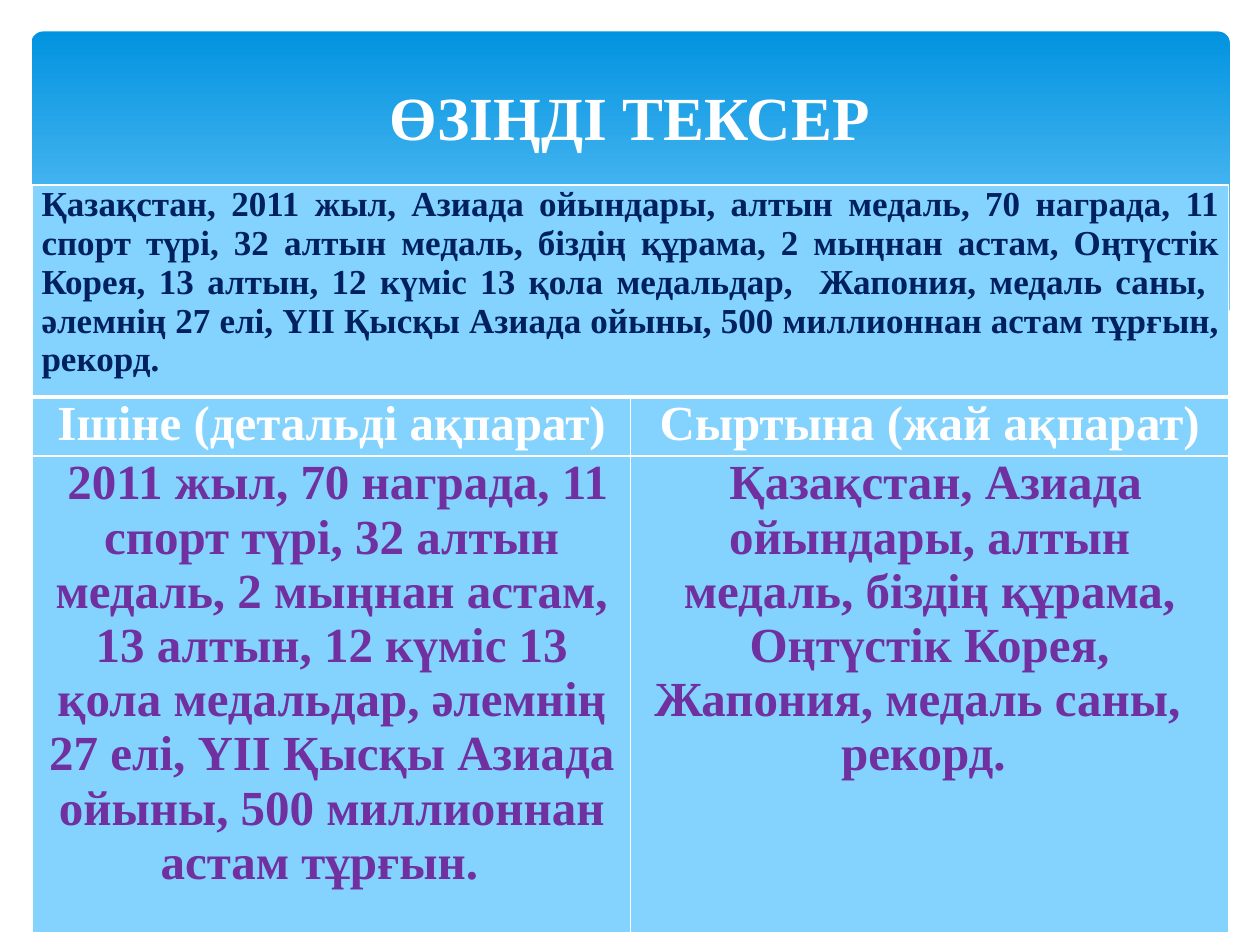
from lxml import etree
from pptx import Presentation
from pptx import util as u
from pptx.dml.color import RGBColor
from pptx.enum import shapes, text
from pptx.oxml.ns import qn

FONT = "Times New Roman"
WHITE, SKY, BLUE = "FFFFFF", "83D3FE", "0293E0"
NAVY, PLUM = "002060", "7030A0"
LEFT, MID, JUST = text.PP_ALIGN.LEFT, text.PP_ALIGN.CENTER, text.PP_ALIGN.JUSTIFY

LIST = ("Қазақстан, 2011 жыл, Азиада ойындары, алтын медаль, 70 награда, "
        "11 спорт түрі, 32 алтын медаль, біздің құрама, 2 мыңнан астам, "
        "Оңтүстік Корея, 13 алтын, 12 күміс 13 қола медальдар,  Жапония, "
        "медаль саны,  әлемнің 27 елі, ҮІІ Қысқы Азиада ойыны, "
        "500 миллионнан астам тұрғын, рекорд. ")
INNER = (" 2011 жыл, 70 награда, 11 спорт түрі, 32 алтын медаль, "
         "2 мыңнан астам, 13 алтын, 12 күміс 13 қола медальдар, "
         "әлемнің 27 елі, ҮІІ Қысқы Азиада ойыны, "
         "500 миллионнан астам тұрғын.  ")
OUTER = (" Қазақстан, Азиада ойындары, алтын медаль, біздің құрама, "
         "Оңтүстік Корея, Жапония, медаль саны,   рекорд. ")

# Lower edge of the banner, relative to its box
WAVE = [(9.52, 2.21), (9.05, 2.37), (8.5, 2.48), (7.84, 2.52), (7.01, 2.47),
        (6.01, 2.33), (4.78, 2.08), (3.66, 1.82), (2.67, 1.65), (1.68, 1.59),
        (0.81, 1.64), (0.27, 1.76), (-0.02, 1.88), (-0.02, 3.04), (9.52, 3.04)]


def rgb(code):
    return RGBColor.from_string(code)


def style(para, size, color, align):
    para.alignment = align
    font = para.font
    font.name, font.size, font.bold = FONT, u.Pt(size), True
    font.color.rgb = rgb(color)


def banner(slide, x, y, w, h):
    # Rounded gradient panel
    panel = slide.shapes.add_shape(
        shapes.MSO_SHAPE.ROUNDED_RECTANGLE, *map(u.Inches, (x, y, w, h)))
    panel.adjustments[0] = 0.034
    panel.shadow.inherit = False
    panel.line.fill.background()
    panel.fill.gradient()
    panel.fill.gradient_angle = 270
    for stop, color, pos in zip(panel.fill.gradient_stops, (BLUE, SKY), (0, 0.9)):
        stop.color.rgb, stop.position = rgb(color), pos

    # White wave along the bottom
    pts = [(u.Inches(x + a), u.Inches(y + b)) for a, b in WAVE]
    pen = slide.shapes.build_freeform(*pts[0])
    pen.add_line_segments(pts[1:], close=True)
    wave = pen.convert_to_shape()
    wave.shadow.inherit = False
    wave.fill.solid()
    wave.fill.fore_color.rgb = rgb(WHITE)
    wave.line.fill.background()


def heading(slide, x, y, w, h):
    title = slide.shapes.title
    title.left, title.top, title.width, title.height = map(u.Inches, (x, y, w, h))
    frame = title.text_frame
    frame.text = "ӨЗІҢДІ ТЕКСЕР"
    frame.vertical_anchor = text.MSO_ANCHOR.MIDDLE
    style(frame.paragraphs[0], 35, WHITE, MID)
    # Bring the heading in front of the banner
    slide.shapes._spTree.append(title._element)


def edges(cell, widths):
    props = cell._tc.get_or_add_tcPr()
    for side, pts in zip("LRTB", widths):
        line = etree.SubElement(props, qn(f"a:ln{side}"), w=str(u.Pt(pts)))
        fill = etree.SubElement(line, qn("a:solidFill"))
        etree.SubElement(fill, qn("a:srgbClr"), val=WHITE)


def grid(slide, x, y, w, h):
    rows = (1.68, 0.47, h - 2.15)
    table = slide.shapes.add_table(3, 2, *map(u.Inches, (x, y, w, h))).table
    for row, tall in zip(table.rows, rows):
        row.height = u.Inches(tall)
    for col in table.columns:
        col.width = u.Inches(w / 2)

    # Borders and fill; a thick rule divides the list from the answers
    for r in range(3):
        for c in range(2):
            cell = table.cell(r, c)
            edges(cell, (1, 1, 3 if r == 1 else 1, 3 if r == 0 else 1))
            cell.fill.solid()
            cell.fill.fore_color.rgb = rgb(SKY)
            cell.margin_left = cell.margin_right = u.Inches(0.07)
            cell.margin_top = cell.margin_bottom = 0
    table.cell(0, 0).merge(table.cell(0, 1))

    # Wording
    for r, c, words, size, color, align in (
            (0, 0, LIST, 20, NAVY, JUST),
            (1, 0, "Ішіне (детальді ақпарат)", 28, WHITE, MID),
            (1, 1, "Сыртына (жай ақпарат)", 28, WHITE, MID),
            (2, 0, INNER, 28, PLUM, MID),
            (2, 1, OUTER, 28, PLUM, MID)):
        cell = table.cell(r, c)
        cell.text = words
        para = cell.text_frame.paragraphs[0]
        para.space_after = u.Pt(10)
        style(para, size, color, align)


def main():
    deck = Presentation()
    deck.slide_width, deck.slide_height = u.Inches(10), u.Inches(7.5)
    slide = deck.slides.add_slide(deck.slide_layouts[5])
    banner(slide, 0.25, 0.25, 9.51, 2.7)
    heading(slide, 0.5, 0.37, 9, 1.1)
    grid(slide, 0.26, 1.47, 9.49, 5.93)
    deck.save("out.pptx")


if __name__ == "__main__":
    main()
